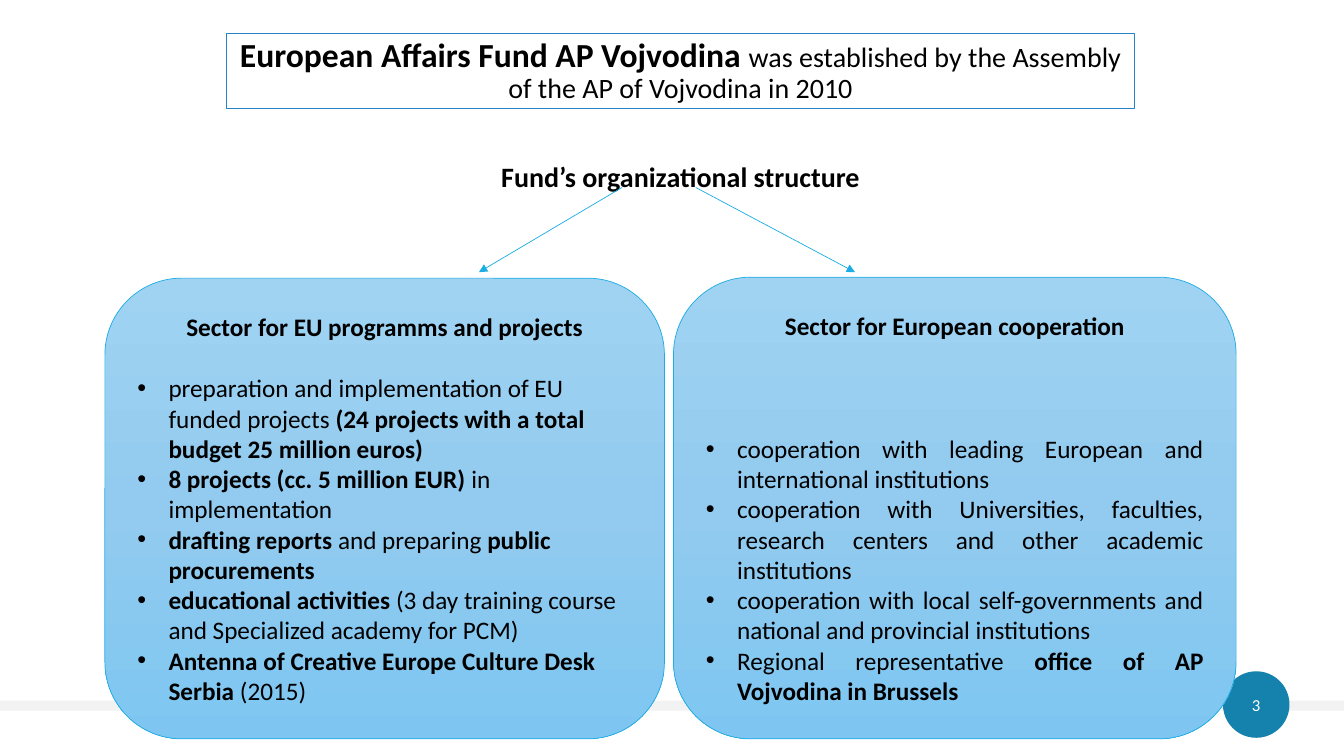
from copy import deepcopy
from lxml.etree import SubElement as Sub
from pptx import Presentation
from pptx.dml.color import RGBColor as RGB
from pptx.enum.shapes import MSO_CONNECTOR as Conn, MSO_SHAPE as Kind
from pptx.enum.text import MSO_ANCHOR as Anchor, MSO_AUTO_SIZE as Fit, PP_ALIGN as Align
from pptx.oxml.ns import qn
from pptx.util import Inches, Pt

HUES = {
    "ink": "000000", "white": "FFFFFF", "band": "F2F2F2", "badge": "1482AC",
    "frame": "2683C6", "edge": "1CADE4",
    "top": "A0D3F2", "mid": "92CBEF", "base": "7EC6F1",
}
FONT = "Calibri"

PROJECTS = [
    [("preparation and implementation of EU funded projects ", False),
     ("(24 projects with a total budget 25 million euros)", True)],
    [("8 projects (cc. 5 million EUR) ", True), ("in implementation", False)],
    [("drafting reports ", True), ("and preparing ", False),
     ("public procurements", True)],
    [("educational activities ", True),
     ("(3 day training course and Specialized academy for PCM)", False)],
    [("Antenna of Creative Europe Culture Desk Serbia", True), ("\u00a0(2015)", False)],
]
PARTNERS = [
    [("cooperation with leading European and international institutions", False)],
    [("cooperation with Universities, faculties, research centers "
      "and other academic institutions", False)],
    [("cooperation with local self-governments and "
      "national and provincial institutions", False)],
    [("Regional representative ", False),
     ("office of AP Vojvodina in Brussels", True)],
]


def hue(name):
    return RGB.from_string(HUES[name])


def add_run(para, text, size, bold=False, ink="ink"):
    run = para.add_run()
    run.text = text
    font = run.font
    font.name, font.size, font.bold = FONT, Pt(size), bold
    font.color.rgb = hue(ink)


def set_line(shape, name, width):
    shape.line.color.rgb = hue(name)
    shape.line.width = Pt(width)


def add_form(slide, kind, box, fill=None):
    form = slide.shapes.add_shape(kind, *map(Inches, box))
    form.shadow.inherit = False
    if fill:
        form.fill.solid()
        form.fill.fore_color.rgb = hue(fill)
        form.line.fill.background()
    return form


def set_bullet(para):
    props = para._p.get_or_add_pPr()
    props.set("marL", str(Inches(0.31)))
    props.set("indent", str(Inches(-0.31)))
    Sub(props, qn("a:buFont")).set("typeface", "Arial")
    Sub(props, qn("a:buChar")).set("char", "•")


def shade(form):
    form.fill.gradient()
    form.fill.gradient_angle = 270
    stops = form.element.find(".//" + qn("a:gsLst"))
    stops.insert(1, deepcopy(stops[0]))
    names = ("top", "mid", "base")
    for stop, place, name in zip(form.fill.gradient_stops, (0, 0.5, 1), names):
        stop.position = place
        stop.color.rgb = hue(name)


def add_sector(slide, box, head, items, gap, align):
    card = add_form(slide, Kind.ROUNDED_RECTANGLE, box)
    shade(card)
    set_line(card, "edge", 0.5)
    frame = card.text_frame
    frame.word_wrap = True
    frame.vertical_anchor = Anchor.MIDDLE
    para = frame.paragraphs[0]
    para.alignment = Align.CENTER
    para.space_after = Pt(gap)
    add_run(para, head, 18, True)
    for item in items:
        para = frame.add_paragraph()
        para.alignment = align
        set_bullet(para)
        for text, bold in item:
            add_run(para, text, 18, bold)


def add_arrow(slide, start, end):
    ends = map(Inches, start + end)
    arrow = slide.shapes.add_connector(Conn.STRAIGHT, *ends)
    set_line(arrow, "edge", 0.5)
    Sub(arrow.line._get_or_add_ln(), qn("a:tailEnd")).set("type", "triangle")
    Sub(arrow.element.spPr, qn("a:effectLst"))


def add_footer(slide):
    add_form(slide, Kind.RECTANGLE, (0, 6.95, 13.33, 0.1), "band")
    badge = add_form(slide, Kind.OVAL, (12.13, 6.66, 0.66, 0.66), "badge")
    frame = badge.text_frame
    frame.vertical_anchor = Anchor.MIDDLE
    frame.paragraphs[0].alignment = Align.CENTER
    add_run(frame.paragraphs[0], "3", 12, ink="white")


def fill_intro(body):
    body.left, body.top, body.width, body.height = map(Inches, (2.25, 0.33, 9, 0.75))
    set_line(body, "frame", 0.75)
    frame = body.text_frame
    frame.auto_size = Fit.NONE
    frame.word_wrap = True
    frame.vertical_anchor = Anchor.TOP
    lead, head = frame.paragraphs[0], frame.add_paragraph()
    for para, gap in ((lead, 0), (head, 42)):
        para.alignment = Align.CENTER
        para.line_spacing = 0.9
        para.space_before = Pt(gap)
        props = para._p.get_or_add_pPr()
        props.set("marL", "0")
        props.set("indent", "0")
        Sub(props, qn("a:buNone"))
    add_run(lead, "European Affairs Fund AP Vojvodina ", 24, True)
    add_run(lead, "was established by the Assembly of the AP of Vojvodina in 2010", 20)
    add_run(head, "Fund’s organizational structure", 20, True)


def main():
    deck = Presentation()
    deck.slide_width, deck.slide_height = Inches(13.33), Inches(7.5)
    slide = deck.slides.add_slide(deck.slide_layouts[1])
    title = slide.shapes.title.element
    title.getparent().remove(title)
    fill_intro(slide.placeholders[1])
    add_footer(slide)
    add_sector(slide, (1.04, 2.76, 5.55, 4.57),
               "Sector for EU programms and projects", PROJECTS, 22, Align.LEFT)
    add_sector(slide, (6.68, 2.75, 5.58, 4.58),
               "Sector for European cooperation", PARTNERS, 66, Align.JUSTIFY)
    add_arrow(slide, (6.17, 1.86), (4.75, 2.7))
    add_arrow(slide, (6.9, 1.86), (8.48, 2.7))
    deck.save("out.pptx")


if __name__ == "__main__":
    main()
